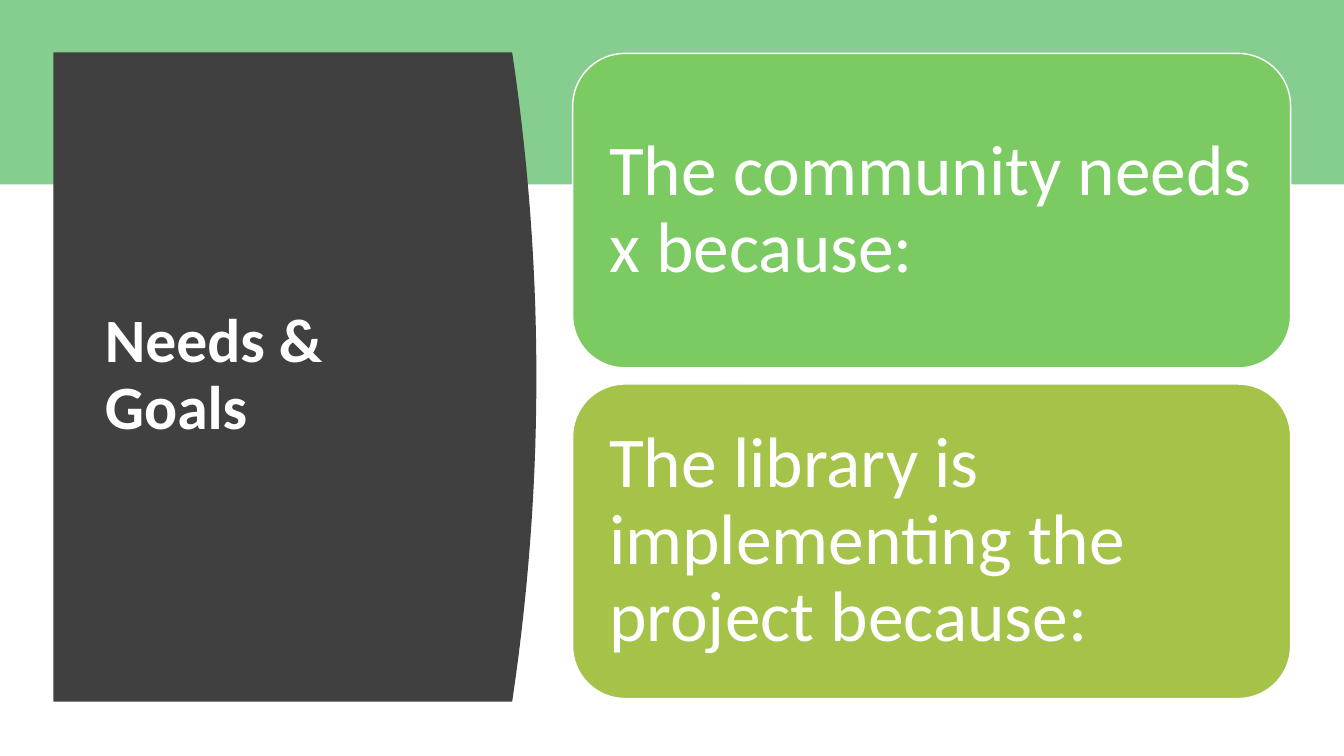
from pptx import Presentation
from pptx.dml.color import RGBColor
from pptx.enum.shapes import MSO_SHAPE
from pptx.enum.text import MSO_ANCHOR, MSO_AUTO_SIZE, PP_ALIGN
from pptx.util import Emu, Pt

EMU_PER_PX = 9144
FONT = "Calibri"
COLORS = {
    "white": "FFFFFF",
    "band": "86CD90",
    "panel": "404040",
    "needs": "7CCA62",
    "goals": "A5C249",
}
CARDS = [
    ("The community needs x because:", "needs"),
    ("The library is implementing the project because:", "goals"),
]
CARD_TOP, CARD_PITCH = 53, 328


def px(value):
    return Emu(round(value * EMU_PER_PX))


def color(name):
    return RGBColor.from_string(COLORS[name])


def paint(shape, fill, line=None):
    shape.shadow.inherit = False
    shape.fill.solid()
    shape.fill.fore_color.rgb = color(fill)
    if line:
        shape.line.color.rgb = color(line)
        shape.line.width = Pt(1)
    else:
        shape.line.fill.background()


def write(shape, text, size, bold=False):
    frame = shape.text_frame
    frame.text = text
    frame.word_wrap = True
    frame.auto_size = MSO_AUTO_SIZE.NONE
    frame.vertical_anchor = MSO_ANCHOR.MIDDLE
    paragraph = frame.paragraphs[0]
    paragraph.alignment = PP_ALIGN.LEFT
    paragraph.line_spacing = 0.9
    font = paragraph.runs[0].font
    font.name = FONT
    font.size = Pt(size)
    font.bold = bold
    font.color.rgb = color("white")


def add_box(slide, kind, left, top, width, height, fill, line=None):
    shape = slide.shapes.add_shape(kind, px(left), px(top), px(width), px(height))
    paint(shape, fill, line)
    return shape


def add_curved_panel(slide, left, top, right, bottom, bulge, steps=28):
    middle, half = (top + bottom) / 2, (bottom - top) / 2
    heights = [top + (bottom - top) * step / steps for step in range(steps + 1)]
    edge = [
        (px(right - bulge * ((y - middle) / half) ** 2), px(y)) for y in heights
    ]
    builder = slide.shapes.build_freeform(px(left), px(top))
    builder.add_line_segments(edge + [(px(left), px(bottom))], close=True)
    paint(builder.convert_to_shape(), "panel")


def add_title(slide, text, left, top, width, height):
    title = slide.shapes.title
    title.left, title.top = px(left), px(top)
    title.width, title.height = px(width), px(height)
    write(title, text, 44, bold=True)
    slide.shapes.element.append(title.element)


def add_card(slide, top, text, fill):
    card = add_box(
        slide, MSO_SHAPE.ROUNDED_RECTANGLE, 568, top, 712, 312, fill, "white"
    )
    frame = card.text_frame
    frame.margin_left = frame.margin_right = px(21)
    frame.margin_top = frame.margin_bottom = px(21)
    write(card, text, 51)


def main():
    presentation = Presentation()
    presentation.slide_width, presentation.slide_height = px(1333), px(750)
    slide = presentation.slides.add_slide(presentation.slide_layouts[5])
    add_box(slide, MSO_SHAPE.RECTANGLE, 0, 0, 1333, 183, "band")
    add_curved_panel(slide, 53, 52, 532, 696, 24)
    add_title(slide, "Needs & Goals", 94, 111, 374, 524)
    for index, (text, fill) in enumerate(CARDS):
        add_card(slide, CARD_TOP + index * CARD_PITCH, text, fill)
    presentation.save("out.pptx")


if __name__ == "__main__":
    main()
